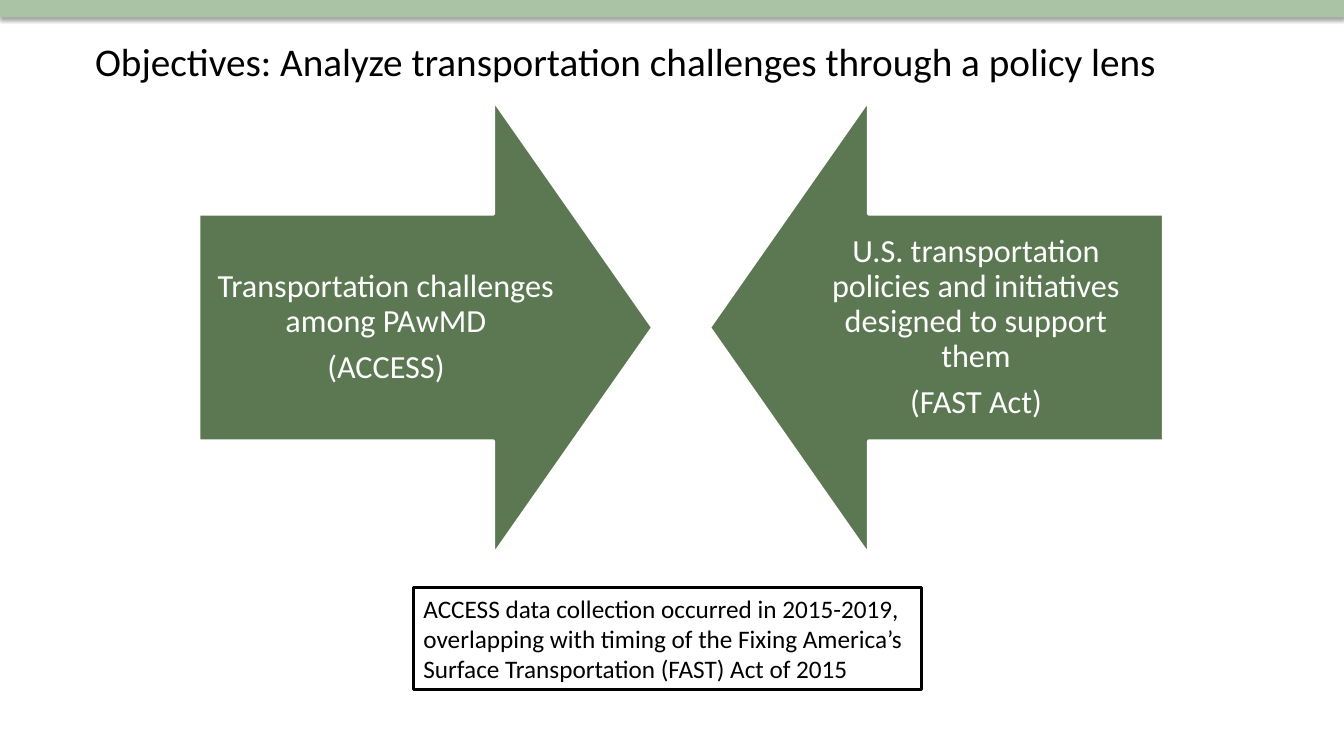
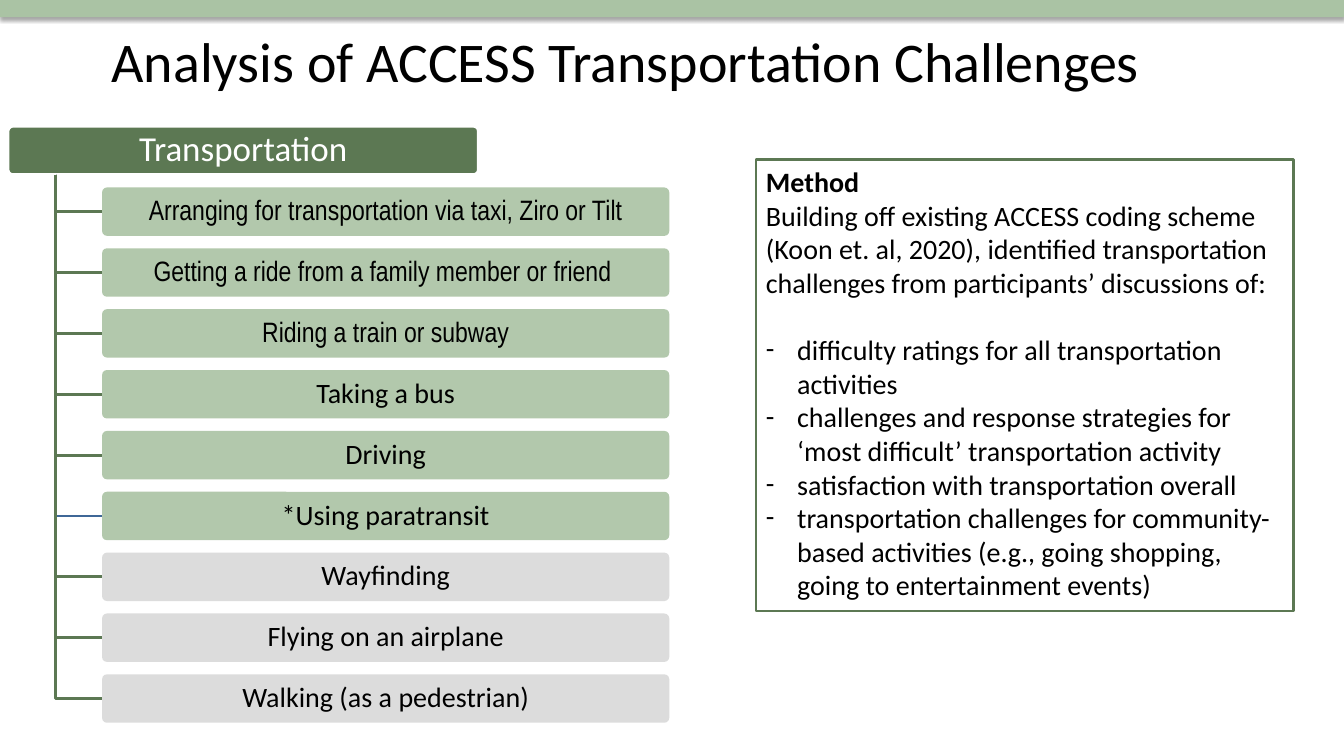
from dataclasses import dataclass

from lxml.etree import SubElement
from pptx import Presentation
from pptx.dml.color import RGBColor
from pptx.enum.shapes import MSO_SHAPE
from pptx.enum.text import MSO_ANCHOR, MSO_AUTO_SIZE, PP_ALIGN
from pptx.oxml.ns import qn
from pptx.util import Inches, Length, Pt


@dataclass(frozen=True)
class Theme:
    dark_green: str = "5C7853"
    light_green: str = "AAC3A4"
    grey: str = "D9D9D9"
    blue: str = "3F6797"
    black: str = "000000"
    white: str = "FFFFFF"
    font: str = "Calibri"
    narrow_font: str = "Arial Narrow"
    long_title_size: int = 28
    title_size: int = 40
    heading_size: int = 25
    arrow_size: int = 23
    body_size: int = 20
    note_size: int = 18
    line_width: int = 2
    tight_spacing: float = 0.9
    paragraph_gap: float = 0.35


@dataclass(frozen=True)
class Box:
    """A rectangle in percent of the slide's width and height."""
    left: float
    top: float
    width: float
    height: float

    @property
    def bottom(self) -> float:
        return self.top + self.height

    @property
    def middle(self) -> float:
        return self.top + self.height / 2

    def lengths(self) -> tuple[Length, ...]:
        return across(self.left), down(self.top), across(self.width), down(self.height)


@dataclass(frozen=True)
class Arrow:
    preset: MSO_SHAPE
    left: float
    lines: tuple[str, ...]


@dataclass(frozen=True)
class Card:
    text: str
    fill: str
    font: str
    branch: str


THEME = Theme()
SLIDE_WIDTH, SLIDE_HEIGHT = Inches(13.33), Inches(7.5)

BAND = Box(0, 0, 100, 2.27)
TITLE = Box(5.03, 2.67, 83, 10.67)
NOTE = Box(30.77, 77.77, 37.8, 13.47)
METHOD = Box(56.25, 21.1, 40, 59.73)
HEADING = Box(0.6, 16.7, 35, 6.4)
FIRST_CARD = Box(7.6, 24.8, 42.2, 6.4)
CARD_STEP = 8.05
TRUNK_LEFT = 4.1

ARROWS = (
    Arrow(MSO_SHAPE.RIGHT_ARROW, 14.8,
          ("Transportation challenges among PAwMD", "(ACCESS)")),
    Arrow(MSO_SHAPE.LEFT_ARROW, 52.8,
          ("U.S. transportation policies and initiatives designed to support them",
           "(FAST Act)")),
)


def green_card(text: str, font: str = THEME.font, branch: str = THEME.dark_green) -> Card:
    return Card(text, THEME.light_green, font, branch)


def grey_card(text: str) -> Card:
    return Card(text, THEME.grey, THEME.font, THEME.dark_green)


CARDS = (
    green_card("Arranging for transportation via taxi, Ziro or Tilt", THEME.narrow_font),
    green_card("Getting a ride from a family member or friend ", THEME.narrow_font),
    green_card("Riding a train or subway", THEME.narrow_font),
    green_card("Taking a bus"),
    green_card("Driving"),
    green_card("*Using paratransit", branch=THEME.blue),
    grey_card("Wayfinding"),
    grey_card("Flying on an airplane"),
    grey_card("Walking (as a pedestrian)"),
)

NOTE_TEXT = ("ACCESS data collection occurred in 2015-2019, overlapping with timing of "
             "the Fixing America’s Surface Transportation (FAST) Act of 2015")
METHOD_INTRO = ("Building off existing ACCESS coding scheme (Koon et. al, 2020), identified "
                "transportation challenges from participants’ discussions of:")
METHOD_ITEMS = (
    "difficulty ratings for all transportation activities",
    "challenges and response strategies for ‘most difficult’ transportation activity",
    "satisfaction with transportation overall",
    "transportation challenges for community-based activities "
    "(e.g., going shopping, going to entertainment events)",
)


def across(percent: float) -> Length:
    return Length(round(SLIDE_WIDTH * percent / 100))


def down(percent: float) -> Length:
    return Length(round(SLIDE_HEIGHT * percent / 100))


def color(value: str) -> RGBColor:
    return RGBColor.from_string(value)


def style_font(paragraph, size: int, ink: str, name: str = THEME.font) -> None:
    paragraph.font.size = Pt(size)
    paragraph.font.name = name
    paragraph.font.color.rgb = color(ink)


def style_line(shape, ink: str) -> None:
    shape.line.color.rgb = color(ink)
    shape.line.width = Pt(THEME.line_width)


def add_block(slide, preset: MSO_SHAPE, box: Box, fill: str, line: str | None = None):
    shape = slide.shapes.add_shape(preset, *box.lengths())
    shape.shadow.inherit = False
    shape.fill.solid()
    shape.fill.fore_color.rgb = color(fill)
    if line:
        style_line(shape, line)
    else:
        shape.line.fill.background()
    return shape


def add_rounded_block(slide, box: Box, fill: str, line: str | None = None):
    shape = add_block(slide, MSO_SHAPE.ROUNDED_RECTANGLE, box, fill, line)
    shape.adjustments[0] = 0.1
    return shape


def set_alpha(color_element, percent: int) -> None:
    SubElement(color_element, qn("a:alpha"), val=str(percent * 1000))


def write_label(shape, lines: tuple[str, ...], size: int, ink: str,
                side: float, edge: float, font: str = THEME.font) -> None:
    """Centre tightly set lines in a shape; side and edge are insets in inches."""
    frame = shape.text_frame
    frame.word_wrap = True
    frame.vertical_anchor = MSO_ANCHOR.MIDDLE
    frame.margin_left = frame.margin_right = Inches(side)
    frame.margin_top = frame.margin_bottom = Inches(edge)
    frame.text = "\n".join(lines)
    for paragraph in frame.paragraphs:
        paragraph.alignment = PP_ALIGN.CENTER
        paragraph.line_spacing = THEME.tight_spacing
        paragraph.space_after = Pt(round(size * THEME.paragraph_gap))
        style_font(paragraph, size, ink, font)


def add_text_panel(slide, box: Box, line: str, lines: tuple[str, ...], size: int):
    """Add an outlined white panel of left-aligned text and return its paragraphs."""
    frame = add_block(slide, MSO_SHAPE.RECTANGLE, box, THEME.white, line).text_frame
    frame.word_wrap = True
    frame.auto_size = MSO_AUTO_SIZE.SHAPE_TO_FIT_TEXT
    frame.vertical_anchor = MSO_ANCHOR.TOP
    frame.text = "\n".join(lines)
    for paragraph in frame.paragraphs:
        paragraph.alignment = PP_ALIGN.LEFT
        style_font(paragraph, size, THEME.black)
    return frame.paragraphs


def add_dash(paragraph) -> None:
    properties = paragraph._p.get_or_add_pPr()
    indent = Inches(0.31)
    properties.set("marL", str(indent))
    properties.set("indent", str(-indent))
    bullet_font = SubElement(properties, qn("a:buFont"), typeface=THEME.font)
    bullet = SubElement(properties, qn("a:buChar"), char="-")
    default_run = properties.find(qn("a:defRPr"))
    if default_run is not None:
        default_run.addprevious(bullet_font)
        default_run.addprevious(bullet)


def add_elbow(slide, left: float, top: float, right: float, bottom: float, ink: str) -> None:
    """Draw an open line that runs down and then right."""
    builder = slide.shapes.build_freeform(across(left), down(top))
    builder.add_line_segments([(across(left), down(bottom)), (across(right), down(bottom))],
                              close=False)
    elbow = builder.convert_to_shape()
    elbow.shadow.inherit = False
    elbow.fill.background()
    style_line(elbow, ink)


def add_titled_slide(presentation, title: str, size: int):
    slide = presentation.slides.add_slide(presentation.slide_layouts[5])
    placeholder = slide.shapes.title
    placeholder.left, placeholder.top, placeholder.width, placeholder.height = TITLE.lengths()
    frame = placeholder.text_frame
    frame.text = title
    frame.word_wrap = True
    frame.auto_size = MSO_AUTO_SIZE.NONE
    frame.vertical_anchor = MSO_ANCHOR.MIDDLE
    frame.paragraphs[0].alignment = PP_ALIGN.CENTER
    style_font(frame.paragraphs[0], size, THEME.black)
    return slide


def add_master_band(presentation, slide) -> None:
    """Draw the shadowed top band and move it to the back of the slide master."""
    band = add_block(slide, MSO_SHAPE.RECTANGLE, BAND, THEME.light_green)
    effects = band.element.spPr.find(qn("a:effectLst"))
    shadow = SubElement(effects, qn("a:outerShdw"), blurRad=str(Pt(3.1)),
                        dist=str(Pt(1.8)), dir="5400000", rotWithShape="0")
    set_alpha(SubElement(shadow, qn("a:srgbClr"), val=THEME.black), 35)
    presentation.slide_master.shapes.element.insert(2, band.element)


def build_objectives(presentation):
    slide = add_titled_slide(
        presentation, "Objectives: Analyze transportation challenges through a policy lens",
        THEME.long_title_size)
    for arrow in ARROWS:
        box = Box(arrow.left, 13.33, 33.75, 60)
        shape = add_block(slide, arrow.preset, box, THEME.dark_green, THEME.white)
        shape.adjustments[0], shape.adjustments[1] = 0.5, 0.35
        write_label(shape, arrow.lines, THEME.arrow_size, THEME.white, 0.18, 0.18)
    add_text_panel(slide, NOTE, THEME.black, (NOTE_TEXT,), THEME.note_size)
    return slide


def add_card_tree(slide) -> None:
    heading = add_rounded_block(slide, HEADING, THEME.dark_green, THEME.white)
    write_label(heading, ("Transportation",), THEME.heading_size, THEME.white, 0.05, 0.03)
    for row, card in enumerate(CARDS):
        box = Box(FIRST_CARD.left, FIRST_CARD.top + row * CARD_STEP,
                  FIRST_CARD.width, FIRST_CARD.height)
        add_elbow(slide, TRUNK_LEFT, HEADING.bottom, box.left, box.middle, card.branch)
        shape = add_rounded_block(slide, box, card.fill)
        set_alpha(shape.element.spPr.find(qn("a:solidFill"))[0], 90)
        write_label(shape, (card.text,), THEME.body_size, THEME.black, 0.04, 0.03, card.font)


def build_analysis(presentation) -> None:
    slide = add_titled_slide(presentation, "Analysis of ACCESS Transportation Challenges",
                             THEME.title_size)
    add_card_tree(slide)
    heading, _, *items = add_text_panel(slide, METHOD, THEME.dark_green,
                                        ("Method", METHOD_INTRO, *METHOD_ITEMS),
                                        THEME.body_size)
    heading.font.bold = True
    for item in items:
        add_dash(item)
    items[0].space_before = Pt(24)


def main() -> None:
    presentation = Presentation()
    presentation.slide_width, presentation.slide_height = SLIDE_WIDTH, SLIDE_HEIGHT
    add_master_band(presentation, build_objectives(presentation))
    build_analysis(presentation)
    presentation.save("out.pptx")


if __name__ == "__main__":
    main()
